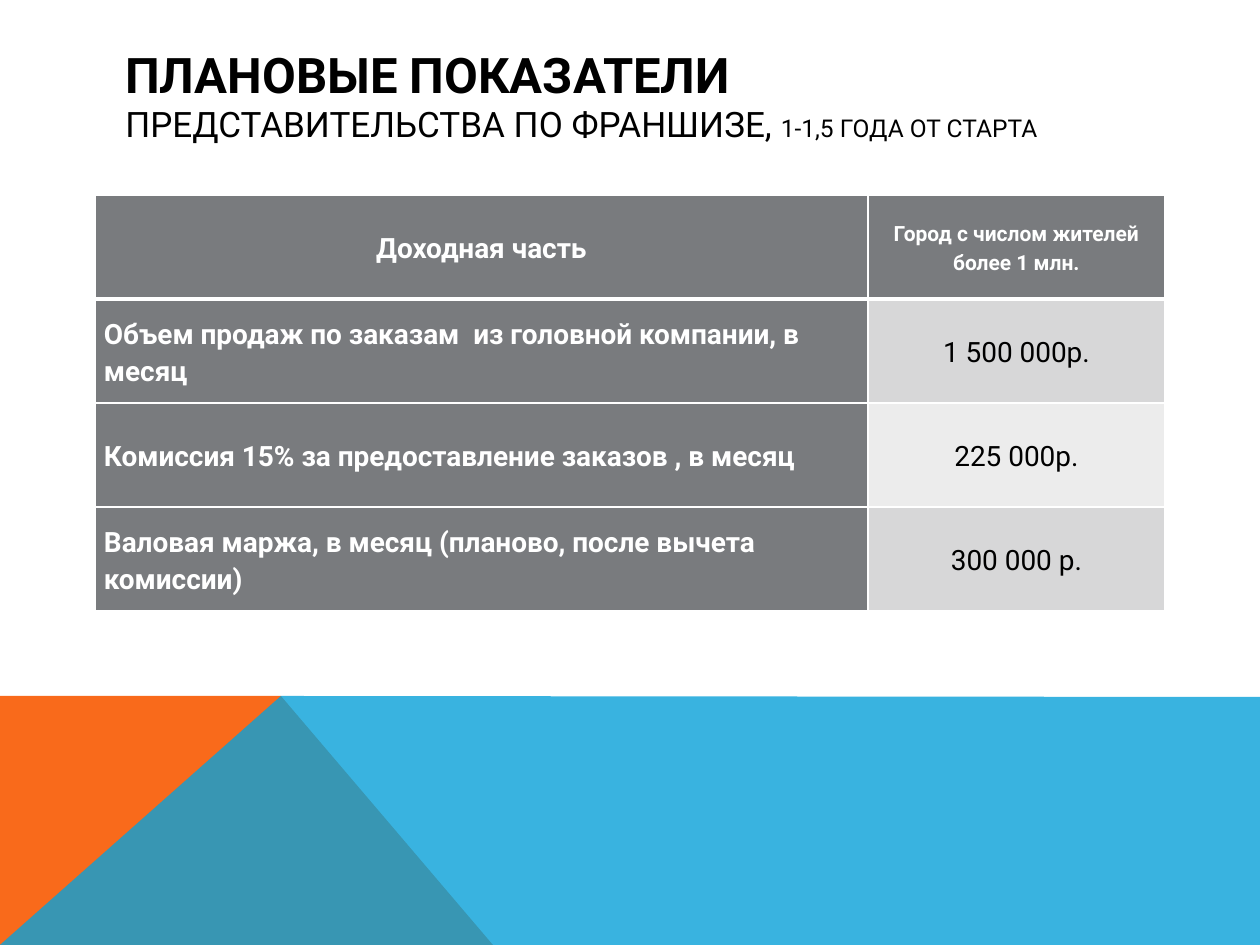
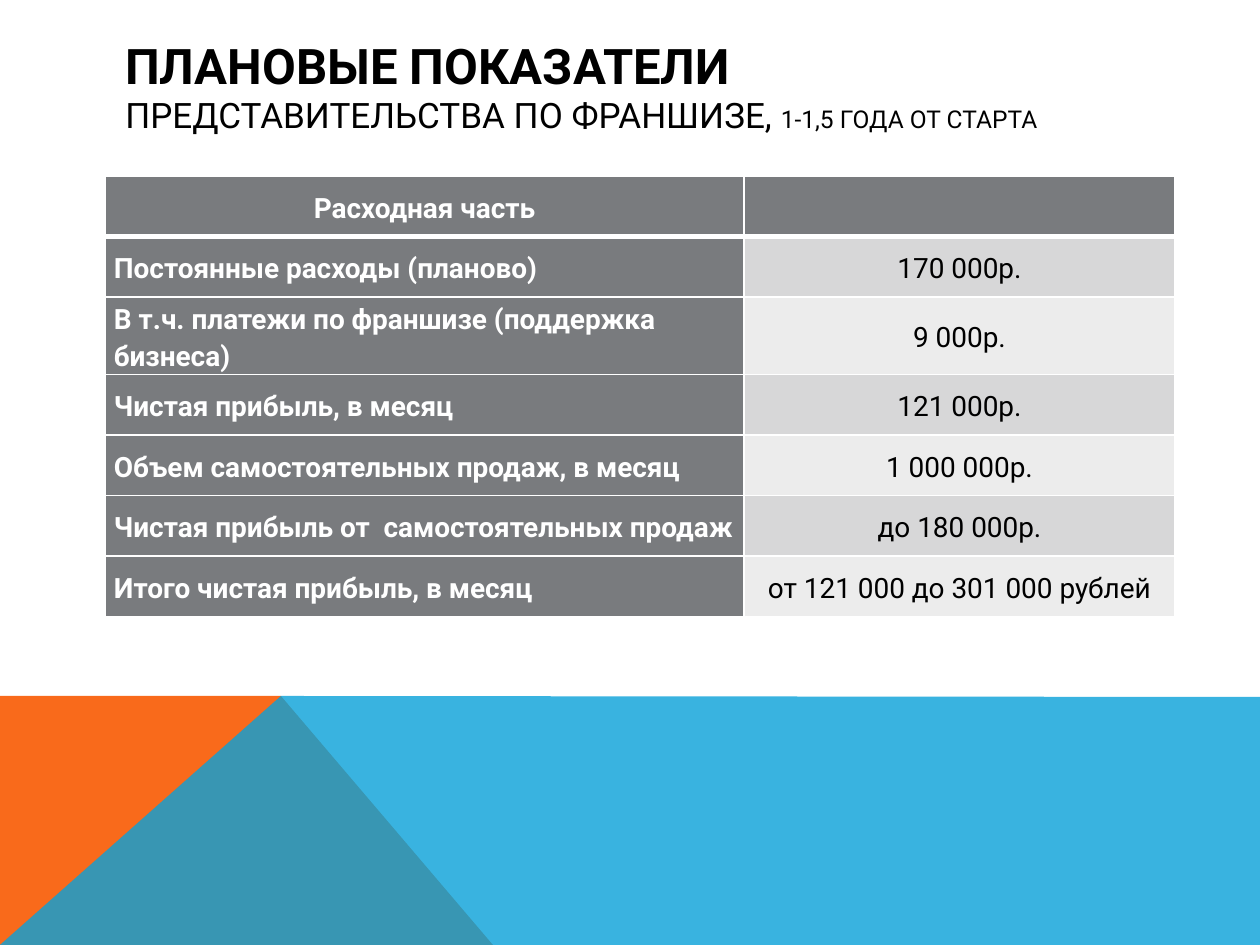
import pptx
import pptx.util
import pptx.dml.color
import pptx.enum.text
import pptx.oxml
import pptx.oxml.ns
import lxml.etree

PX = 914400 // 126
FONT = "Roboto"
WHITE, BLACK, GRAY = "FFFFFF", "000000", "797B7E"
STRIPES = ["D7D7D8", "ECECEC"]
MIDDLE = pptx.enum.text.MSO_ANCHOR.MIDDLE
CENTER = pptx.enum.text.PP_ALIGN.CENTER
LEFT = pptx.enum.text.PP_ALIGN.LEFT
qn = pptx.oxml.ns.qn


def color(code):
    return pptx.dml.color.RGBColor.from_string(code)


def write(para, text, size, tint, bold):
    run = para.add_run()
    run.text = text
    run.font.name = FONT
    run.font.size = pptx.util.Pt(size)
    run.font.bold = bold
    run.font.color.rgb = color(tint)


BANDS = [
    ("F96A1B", 100, [(0, 945), (0, 696), (281, 696), (493, 945)]),
    ("08A1D9", 80, [(0, 945), (281, 696), (1260, 697), (1260, 945)]),
]

PAGES = [
    {
        "inset": 36, "left": 95, "top": 195, "height": 416, "cols": [773, 297],
        "rows": [
            ("Доходная часть", "Город с числом жителей более 1 млн."),
            ("Объем продаж по заказам  из головной компании, в месяц", "1 500 000р."),
            ("Комиссия 15% за предоставление заказов , в месяц", "225 000р."),
            ("Валовая маржа, в месяц (планово, после вычета комиссии)", "300 000 р."),
        ],
    },
    {
        "inset": 54, "left": 105, "top": 176, "height": 424, "cols": [639, 431],
        "rows": [
            ("Расходная часть", ""),
            ("Постоянные расходы (планово)", "170 000р."),
            ("В т.ч. платежи по франшизе (поддержка бизнеса)", "9 000р."),
            ("Чистая прибыль, в месяц", "121 000р."),
            ("Объем самостоятельных продаж, в месяц", "1 000 000р."),
            ("Чистая прибыль от  самостоятельных продаж", "до 180 000р."),
            ("Итого чистая прибыль, в месяц", "от 121 000 до 301 000 рублей"),
        ],
    },
]

deck = pptx.Presentation()
deck.slide_width = pptx.util.Inches(10)
deck.slide_height = pptx.util.Inches(7.5)

for page in PAGES:
    slide = deck.slides.add_slide(deck.slide_layouts[6])

    for tint, alpha, points in BANDS:
        pen = slide.shapes.build_freeform(*points[0], scale=PX)
        pen.add_line_segments(points[1:], close=True)
        band = pen.convert_to_shape()
        band.shadow.inherit = False
        band.fill.solid()
        band.fill.fore_color.rgb = color(tint)
        band.line.fill.background()
        if alpha < 100:
            node = band.fill._xPr.find(qn("a:solidFill"))[0]
            lxml.etree.SubElement(node, qn("a:alpha"), val=str(alpha * 1000))

    title = slide.shapes.add_textbox(113 * PX, 50 * PX, 1036 * PX, 125 * PX)
    frame = title.text_frame
    frame.word_wrap = True
    frame.vertical_anchor = MIDDLE
    frame.margin_top = 0
    frame.margin_bottom = page["inset"] * PX
    para = frame.paragraphs[0]
    write(para, "ПЛАНОВЫЕ ПОКАЗАТЕЛИ", 28, BLACK, True)
    para.add_line_break()
    write(para, "ПРЕДСТАВИТЕЛЬСТВА ПО ФРАНШИЗЕ, ", 20, BLACK, False)
    write(para, "1-1,5 ГОДА ОТ СТАРТА", 14, BLACK, False)

    rows, cols = page["rows"], page["cols"]
    table = slide.shapes.add_table(
        len(rows), len(cols), page["left"] * PX, page["top"] * PX,
        sum(cols) * PX, page["height"] * PX).table
    for col, width in enumerate(cols):
        table.columns[col].width = width * PX

    for row, texts in enumerate(rows):
        for col, text in enumerate(texts):
            cell = table.cell(row, col)
            head = row == 0
            label = head or col == 0
            cell.vertical_anchor = MIDDLE
            cell.margin_left = cell.margin_right = 9 * PX
            cell.margin_top = cell.margin_bottom = 0

            props = cell._tc.get_or_add_tcPr()
            for side in "LRTB":
                thick = (head and side == "B") or (row == 1 and side == "T")
                width = pptx.util.Pt(3 if thick else 1)
                edge = lxml.etree.SubElement(props, qn("a:ln" + side), w=str(width))
                fill = lxml.etree.SubElement(edge, qn("a:solidFill"))
                lxml.etree.SubElement(fill, qn("a:srgbClr"), val=WHITE)

            cell.fill.solid()
            cell.fill.fore_color.rgb = color(GRAY if label else STRIPES[(row - 1) % 2])
            if text:
                para = cell.text_frame.paragraphs[0]
                para.alignment = CENTER if head or col else LEFT
                para.line_spacing = 1.15
                para.space_after = pptx.util.Pt(10)
                size = 12 if head and col else 16
                write(para, text, size, WHITE if label else BLACK, label)

deck.save("out.pptx")
